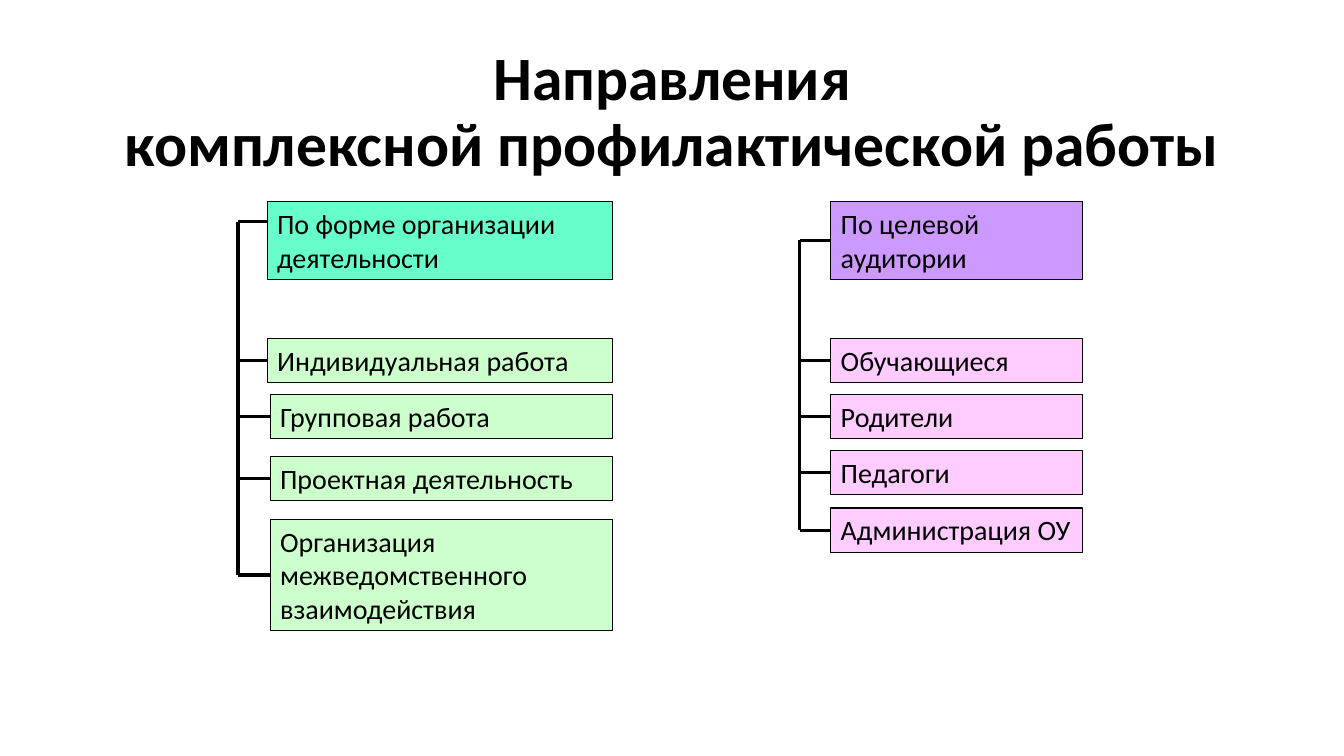
"""Build a slide showing two trees of prevention work directions."""
from dataclasses import dataclass

from lxml import etree
from pptx import Presentation
from pptx.dml.color import RGBColor
from pptx.enum import shapes, text
from pptx.oxml.ns import qn
from pptx.util import Inches, Pt

TITLE = "Направления\vкомплексной профилактической работы"
TREES = [
    dict(trunk=2.36, right=6.08, colors=("teal", "green"), nodes=[
        dict(label="По форме организации деятельности",
             left=2.65, top=2, high=0.77, tap=2.2),
        dict(label="Индивидуальная работа", left=2.65, top=3.36),
        dict(label="Групповая работа", left=2.68, top=3.91),
        dict(label="Проектная деятельность", left=2.68, top=4.53),
        dict(label="Организация межведомственного взаимодействия",
             left=2.68, top=5.15, high=1.11),
    ]),
    dict(trunk=7.93, right=10.74, colors=("violet", "pink"), nodes=[
        dict(label="По целевой аудитории", left=8.24, top=2, high=0.77),
        dict(label="Обучающиеся", left=8.24, top=3.36),
        dict(label="Родители", left=8.24, top=3.91),
        dict(label="Педагоги", left=8.24, top=4.47),
        dict(label="Администрация ОУ", left=8.24, top=5.04, wrap=False),
    ]),
]


@dataclass(frozen=True)
class Theme:
    """Colours, font and sizes of the slide."""
    ink: str = "000000"
    teal: str = "66FFCC"
    green: str = "CCFFCC"
    violet: str = "CC99FF"
    pink: str = "FFCCFF"
    font: str = "Calibri"
    head: float = 44
    body: float = 20
    edge: float = 0.75
    link: float = 2.25
    row: float = 0.44


THEME = Theme()


def color(name):
    """Return a theme colour by name."""
    return RGBColor.from_string(getattr(THEME, name))


def write(frame, words, size=THEME.body, bold=False, align=text.PP_ALIGN.LEFT,
          anchor=text.MSO_ANCHOR.TOP, space=1.0, wrap=True):
    """Fill a text frame with formatted words."""
    frame.text = words
    frame.word_wrap = wrap
    frame.auto_size = text.MSO_AUTO_SIZE.NONE
    frame.vertical_anchor = anchor
    for para in frame.paragraphs:
        para.alignment = align
        para.line_spacing = space
        for run in para.runs:
            run.font.name = THEME.font
            run.font.size = Pt(size)
            run.font.bold = bold
            run.font.color.rgb = color("ink")


def add_box(slide, node, right, fill):
    """Draw one labelled box."""
    left = node["left"]
    box = slide.shapes.add_shape(
        shapes.MSO_SHAPE.RECTANGLE, Inches(left), Inches(node["top"]),
        Inches(right - left), Inches(node.get("high", THEME.row)))
    box.shadow.inherit = False
    box.fill.solid()
    box.fill.fore_color.rgb = color(fill)
    box.line.color.rgb = color("ink")
    box.line.width = Pt(THEME.edge)
    write(box.text_frame, node["label"], wrap=node.get("wrap", True))
    return box


def add_line(slide, x1, y1, x2, y2):
    """Draw one plain straight line."""
    line = slide.shapes.add_connector(
        shapes.MSO_CONNECTOR.STRAIGHT, x1, y1, x2, y2)
    line.line.color.rgb = color("ink")
    line.line.width = Pt(THEME.link)
    etree.SubElement(line._element.spPr, qn("a:effectLst"))
    return line


def add_tree(slide, trunk, right, colors, nodes):
    """Draw the boxes, their branches and the trunk."""
    x = Inches(trunk)
    taps = []
    for rank, node in enumerate(nodes):
        box = add_box(slide, node, right, colors[min(rank, 1)])
        mid = box.top + box.height // 2
        tap = Inches(node["tap"]) if "tap" in node else mid
        branch = add_line(slide, box.left, tap, x, tap)
        if tap == mid:
            branch.begin_connect(box, 1)
        taps.append(tap)
    add_line(slide, x, taps[0], x, taps[-1])


def main():
    """Build and save the slide."""
    deck = Presentation()
    deck.slide_width, deck.slide_height = Inches(13.33), Inches(7.5)
    slide = deck.slides.add_slide(deck.slide_layouts[5])
    title = slide.shapes.title
    title.left, title.top = Inches(0.92), Inches(0.4)
    title.width, title.height = Inches(11.5), Inches(1.45)
    write(title.text_frame, TITLE, size=THEME.head, bold=True, space=0.9,
          align=text.PP_ALIGN.CENTER, anchor=text.MSO_ANCHOR.MIDDLE)
    for tree in TREES:
        add_tree(slide, **tree)
    deck.save("out.pptx")


if __name__ == "__main__":
    main()
